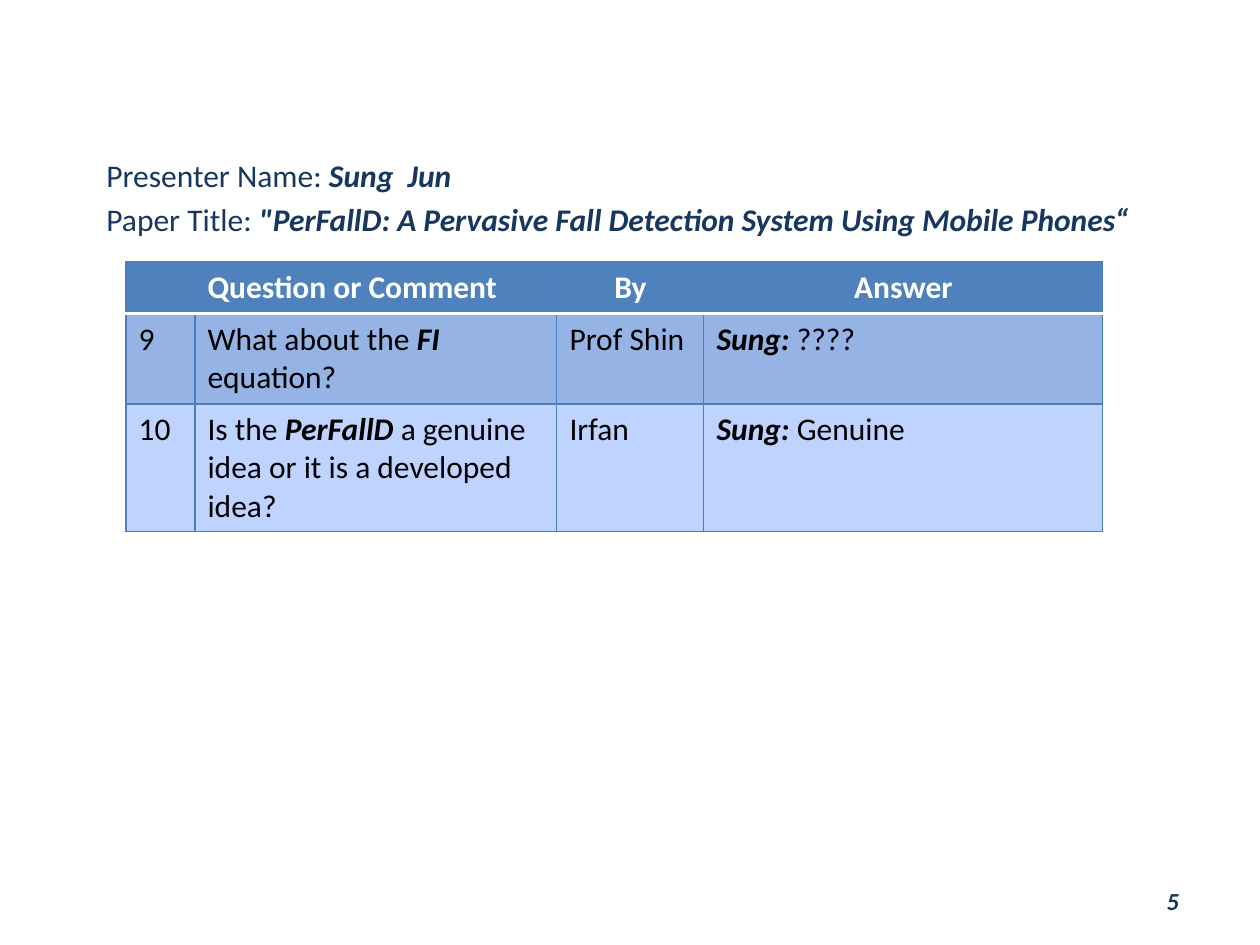
from lxml.etree import SubElement
from pptx import Presentation
from pptx.dml.color import RGBColor
from pptx.enum.text import MSO_ANCHOR, PP_ALIGN
from pptx.oxml.ns import qn
from pptx.util import Emu, Pt

EMU_PER_PX = 914400 // 126
FONT = "Calibri"
NAVY, BLUE, BORDER = "17375E", "4F81BD", "4B7EBC"
BLACK, WHITE = "000000", "FFFFFF"
ROW_FILLS = [BLUE, "95B3E4", "BFD3FF"]


def px(length):
    return Emu(length * EMU_PER_PX)


def color(value):
    return RGBColor.from_string(value)


class SlideBuilder:
    def __init__(self, presentation):
        self.slide = presentation.slides.add_slide(presentation.slide_layouts[6])

    def fill_paragraph(self, paragraph, pieces, ink, size=18, bold=None,
                       align=PP_ALIGN.LEFT):
        """Add (text, emphasized) pieces; emphasis is bold italic."""
        paragraph.alignment = align
        font = paragraph.font
        font.name, font.size, font.bold = FONT, Pt(size), bold
        font.color.rgb = color(ink)
        for text, emphasized in pieces:
            run = paragraph.add_run()
            run.text = text
            if emphasized:
                run.font.bold = run.font.italic = True

    def text(self, box, lines, anchor=MSO_ANCHOR.TOP, gap=0, **style):
        frame = self.slide.shapes.add_textbox(*map(px, box)).text_frame
        frame.word_wrap = True
        frame.vertical_anchor = anchor
        for index, pieces in enumerate(lines):
            paragraph = frame.add_paragraph() if index else frame.paragraphs[0]
            if index:
                paragraph.space_before = Pt(gap)
            self.fill_paragraph(paragraph, pieces, NAVY, **style)

    def border(self, cell, side, ink, width):
        line = SubElement(cell._tc.get_or_add_tcPr(), qn(f"a:ln{side}"), w=str(Pt(width)))
        fill = SubElement(line, qn("a:solidFill"))
        SubElement(fill, qn("a:srgbClr"), val=ink)

    def table(self, left, top, widths, heights, rows, alignments):
        table = self.slide.shapes.add_table(
            len(rows), len(widths), px(left), px(top), px(sum(widths)), px(sum(heights))
        ).table
        for column, width in zip(table.columns, widths):
            column.width = px(width)
        for r, (row, height) in enumerate(zip(rows, heights)):
            table.rows[r].height = px(height)
            header_edge = {0: "B", 1: "T"}.get(r)
            for c, pieces in enumerate(row):
                cell = table.cell(r, c)
                for side in "LRTB":
                    ink, width = (WHITE, 2) if side == header_edge else (BORDER, 0.75)
                    self.border(cell, side, ink, width)
                cell.fill.solid()
                cell.fill.fore_color.rgb = color(ROW_FILLS[r])
                self.fill_paragraph(cell.text_frame.paragraphs[0], pieces,
                                    BLACK if r else WHITE, bold=r == 0,
                                    align=alignments[bool(r)][c])


def main():
    presentation = Presentation()
    presentation.slide_width, presentation.slide_height = px(1260), px(945)
    builder = SlideBuilder(presentation)

    # Presenter and paper
    builder.text((94, 150, 1092, 112), [
        [("Presenter Name: ", False), ("Sung  Jun", True)],
        [("Paper Title: ", False),
         ('"PerFallD: A Pervasive Fall Detection System Using Mobile Phones“', True)],
    ], gap=3.6)

    # Questions and answers
    left, center, justify = PP_ALIGN.LEFT, PP_ALIGN.CENTER, PP_ALIGN.JUSTIFY
    questions = [
        [[], [("Question or Comment", False)], [("By", False)], [("Answer", False)]],
        [[("9", False)],
         [("What about the ", False), ("FI ", True), ("equation?", False)],
         [("Prof Shin", False)],
         [("Sung: ", True), ("????", False)]],
        [[("10", False)],
         [("Is the ", False), ("PerFallD", True),
          (" a genuine idea or it is a developed idea?", False)],
         [("Irfan", False)],
         [("Sung: ", True), ("Genuine", False)]],
    ]
    builder.table(126, 262, [69, 362, 147, 399], [52, 90, 128], questions,
                  [[left, left, center, center], [left, left, left, justify]])

    # Slide number
    builder.text((903, 876, 294, 50), [[("5 ", True)]],
                 anchor=MSO_ANCHOR.MIDDLE, size=14, align=PP_ALIGN.RIGHT)

    presentation.save("out.pptx")


if __name__ == "__main__":
    main()
